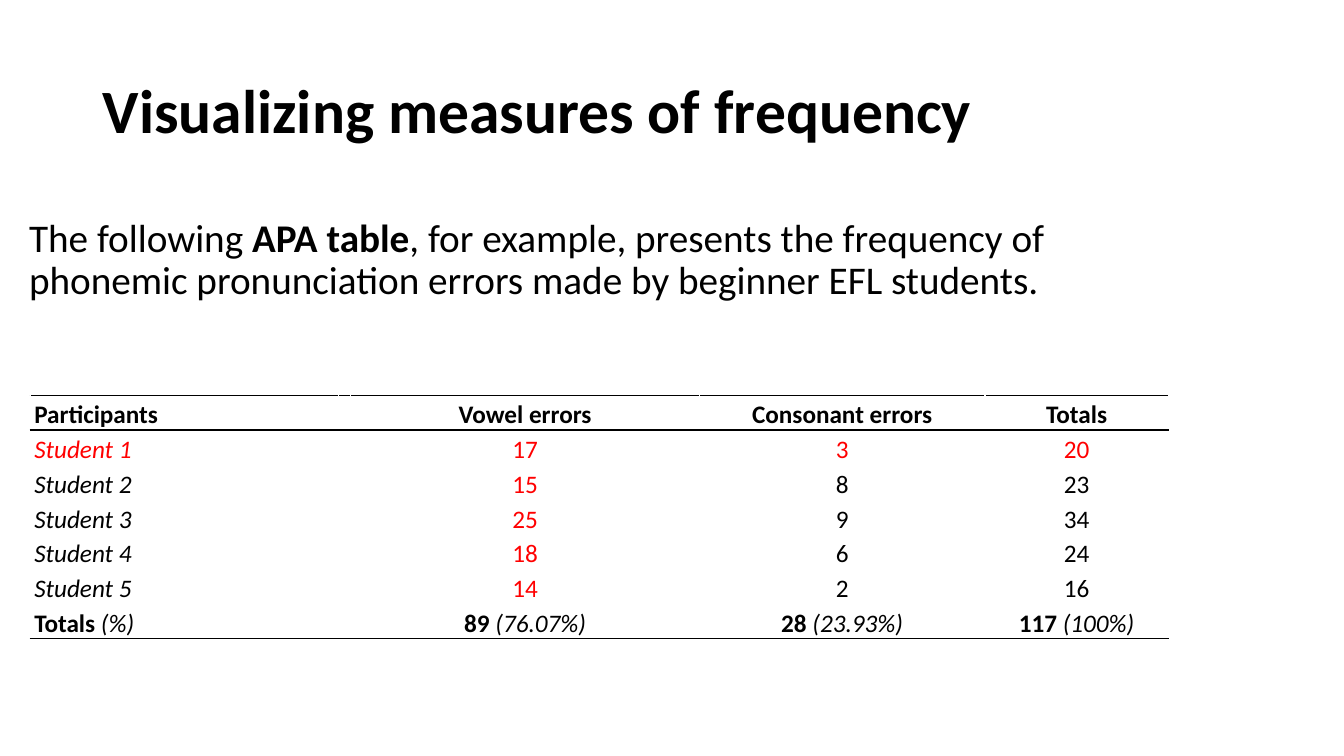
from lxml import etree
from pptx import Presentation
from pptx.dml.color import RGBColor
from pptx.enum.text import MSO_ANCHOR, PP_ALIGN
from pptx.oxml.ns import qn
from pptx.util import Inches, Pt

LEFT, CENTER = PP_ALIGN.LEFT, PP_ALIGN.CENTER
MIDDLE = MSO_ANCHOR.MIDDLE
FONT = "Calibri"
BLACK, RED = "000000", "FF0000"

COLUMN_WIDTHS = [3.06, 0.1, 3.46, 2.83, 1.82]
ROW_HEIGHT = 0.33
HEADER = ["Participants", "", "Vowel errors", "Consonant errors", "Totals"]
ERRORS = [(17, 3), (15, 8), (25, 9), (18, 6), (14, 2)]
TOTALS = [("Totals ", "(%)"), None, ("89 ", "(76.07%)"),
          ("28 ", "(23.93%)"), ("117 ", "(100%)")]
VOWEL_COLUMN = 2


def rgb(color):
    return RGBColor.from_string(color)


def add_run(p, text, size, color=BLACK, bold=False, italic=False):
    r = p.add_run()
    r.text = text
    r.font.name, r.font.size = FONT, Pt(size)
    r.font.bold, r.font.italic = bold, italic
    r.font.color.rgb = rgb(color)


def add_border(cell, side):
    """Draw a thin black rule; side is "T" or "B"."""
    line = etree.SubElement(cell._tc.get_or_add_tcPr(), qn(f"a:ln{side}"), w=str(Pt(1)))
    fill = etree.SubElement(line, qn("a:solidFill"))
    etree.SubElement(fill, qn("a:srgbClr"), val=BLACK)


def table_rows():
    """Return the rows as cells, each a list of (text, format) runs."""
    rows = [[[(text, {"bold": True})] if text else [] for text in HEADER]]
    for number, (vowels, consonants) in enumerate(ERRORS, 1):
        values = [f"Student {number}", "", vowels, consonants, vowels + consonants]
        rows.append([
            [(str(value), {"italic": col == 0,
                           "color": RED if number == 1 or col == VOWEL_COLUMN else BLACK})]
            if value else [] for col, value in enumerate(values)])
    rows.append([[(pair[0], {"bold": True}), (pair[1], {"italic": True})]
                 if pair else [] for pair in TOTALS])
    return rows


def fill_cell(cell, runs, align):
    cell.margin_left = cell.margin_right = Inches(0.04)
    cell.margin_top = cell.margin_bottom = 0
    p = cell.text_frame.paragraphs[0]
    p.alignment, p.line_spacing = align, 1.15
    for text, style in runs:
        add_run(p, text, 18, **style)


def add_error_table(s, left, top):
    rows = table_rows()
    table = s.shapes.add_table(
        len(rows), len(COLUMN_WIDTHS), Inches(left), Inches(top),
        Inches(sum(COLUMN_WIDTHS)), Inches(ROW_HEIGHT * len(rows))).table
    table.first_row = table.horz_banding = False
    for column, width in zip(table.columns, COLUMN_WIDTHS):
        column.width = Inches(width)
    for i, row in enumerate(rows):
        table.rows[i].height = Inches(ROW_HEIGHT)
        for j, runs in enumerate(row):
            cell = table.cell(i, j)
            fill_cell(cell, runs, CENTER if j else LEFT)
            if i <= 1:
                add_border(cell, "T")
            if i in (0, len(rows) - 1):
                add_border(cell, "B")
            cell.fill.background()


def format_frame(tf):
    """Centre the frame vertically and return its first paragraph."""
    tf.word_wrap, tf.vertical_anchor = True, MIDDLE
    p = tf.paragraphs[0]
    p.alignment, p.line_spacing = LEFT, 0.9
    return p


def add_title(s, left, top, width, height):
    title = s.shapes.title
    title.left, title.top = Inches(left), Inches(top)
    title.width, title.height = Inches(width), Inches(height)
    add_run(format_frame(title.text_frame), "Visualizing measures of frequency", 44, bold=True)


def add_introduction(s, left, top, width, height):
    box = s.shapes.add_textbox(Inches(left), Inches(top), Inches(width), Inches(height))
    p = format_frame(box.text_frame)
    add_run(p, "The following ", 28)
    add_run(p, "APA table", 28, bold=True)
    add_run(p, ", for example, presents the frequency of phonemic pronunciation "
               "errors made by beginner EFL students.", 28)


def main():
    prs = Presentation()
    prs.slide_width, prs.slide_height = Inches(13.33), Inches(7.5)
    s = prs.slides.add_slide(prs.slide_layouts[5])
    add_title(s, 0.92, 0.4, 11.5, 1.45)
    add_introduction(s, 0.19, 1.42, 11.5, 2.33)
    add_error_table(s, 0.3, 3.92)
    prs.save("out.pptx")


if __name__ == "__main__":
    main()
